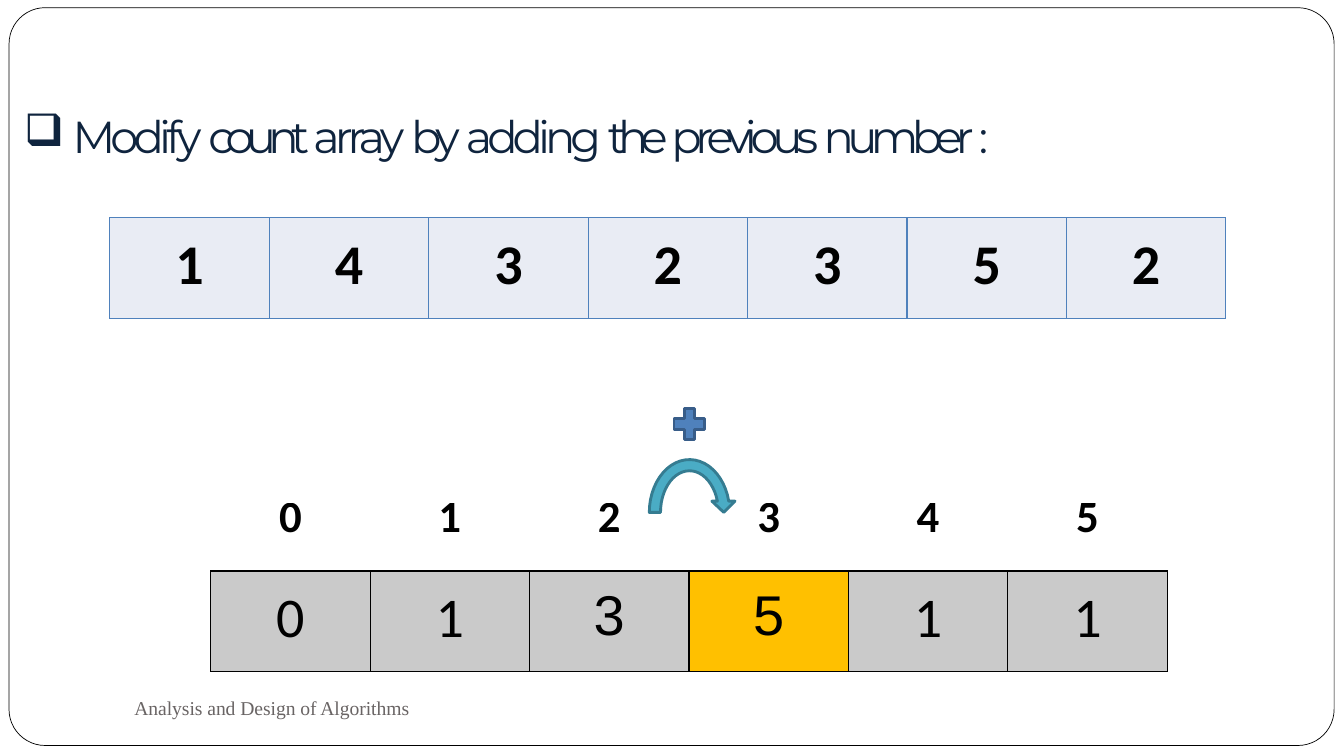
"""Builds the slide on modifying the count array in counting sort."""
import math

from lxml import etree
from pptx import Presentation
from pptx.dml.color import RGBColor
from pptx.enum import shapes, text
from pptx.oxml import ns
from pptx.util import Pt

COLORS = {
    "white": "FFFFFF", "black": "000000", "navy": "0F243E", "footer": "696464",
    "blue": "4F81BC", "blue_line": "385D89", "teal": "4AACC5", "teal_line": "357C91",
    "pale": "E9ECF4", "grey": "CACACA", "gold": "FFC000",
}
CELL_WIDTH = 113.88
TITLE = [("Modify ", -3.5), ("count ", -5.5), ("array ", -3.5), ("by ", -3.9),
         ("adding ", -3.6), ("the ", -5.7), ("previous ", -4.5), ("number ", -4.8)]
INPUT = "1432352"
INDEXES = "012345"
COUNTS = "013511"
CURRENT = 3


def rgb(name):
    return RGBColor.from_string(COLORS[name])


def add_text(p, words, size, font, color="black", bold=False, spacing=0):
    r = p.add_run()
    r.text = words
    r.font.size, r.font.name, r.font.bold = Pt(size), font, bold
    r.font.color.rgb = rgb(color)
    if spacing:
        r._r.get_or_add_rPr().set("spc", str(round(spacing * 100)))


def set_frame(tf, anchor, top=0):
    tf.word_wrap = True
    tf.auto_size = text.MSO_AUTO_SIZE.SHAPE_TO_FIT_TEXT
    tf.vertical_anchor = anchor
    tf.margin_left = tf.margin_right = tf.margin_bottom = 0
    tf.margin_top = Pt(top)


def style_shape(sp, fill, line, width):
    sp.shadow.inherit = False
    sp.fill.solid()
    sp.fill.fore_color.rgb = rgb(fill)
    sp.line.color.rgb = rgb(line)
    sp.line.width = Pt(width)


def add_preset(s, kind, box, adjust, fill, line, width):
    sp = s.shapes.add_shape(kind, *map(Pt, box))
    sp.adjustments[0] = adjust
    style_shape(sp, fill, line, width)
    return sp


def add_title(s):
    sp = s.shapes.title
    sp.left, sp.top, sp.width, sp.height = map(Pt, (16.5, 77, 744.5, 40.5))
    tf = sp.text_frame
    set_frame(tf, text.MSO_ANCHOR.TOP, 1)
    p = tf.paragraphs[0]
    p.alignment = text.PP_ALIGN.LEFT
    p.space_before = Pt(1.1)
    pPr = p._p.get_or_add_pPr()
    pPr.set("marL", str(Pt(35.3)))
    pPr.set("indent", str(-Pt(34.6)))
    etree.SubElement(pPr, ns.qn("a:buChar")).set("char", "❑")
    for words, spacing in TITLE:
        add_text(p, words, 32, "Montserrat", "navy", spacing=spacing)
    add_text(p, ":", 31, "Montserrat", "navy", spacing=-1.4)


def add_grid(s, left, top, heights, columns):
    width = CELL_WIDTH * columns
    frame = s.shapes.add_table(len(heights), columns, Pt(left), Pt(top),
                               Pt(width), Pt(sum(heights)))
    table = frame.table
    table.first_row = table.horz_banding = False
    for row, height in zip(table.rows, heights):
        row.height = Pt(height)
    for column in table.columns:
        column.width = Pt(CELL_WIDTH)
    return table


def set_borders(cell, color, sides):
    tcPr = cell._tc.get_or_add_tcPr()
    for side in sides:
        ln = etree.SubElement(tcPr, ns.qn(f"a:ln{side}"), w=str(Pt(1)))
        fill = etree.SubElement(ln, ns.qn("a:solidFill"))
        etree.SubElement(fill, ns.qn("a:srgbClr"), val=COLORS[color])


def fill_cell(cell, digit, size, fill=None, border="black", sides="LRTB",
              top=9.4, line_spacing=None, font="Calibri", bold=False):
    set_borders(cell, border, sides)
    if fill:
        cell.fill.solid()
        cell.fill.fore_color.rgb = rgb(fill)
    else:
        cell.fill.background()
    cell.margin_left = cell.margin_right = cell.margin_bottom = 0
    cell.margin_top = Pt(top)
    p = cell.text_frame.paragraphs[0]
    p.alignment = text.PP_ALIGN.CENTER
    p.space_before = Pt(top)
    if line_spacing:
        p.line_spacing = Pt(line_spacing)
    add_text(p, digit, size, font, bold=bold)


def add_input_array(s):
    table = add_grid(s, 78.5, 155.5, [72], len(INPUT))
    for i, digit in enumerate(INPUT):
        fill_cell(table.cell(0, i), digit, 40, "pale", "blue", bold=True)


def add_count_array(s):
    table = add_grid(s, 150.5, 358.9, [49, 72], len(COUNTS))
    for i, (index, count) in enumerate(zip(INDEXES, COUNTS)):
        fill_cell(table.cell(0, i), index, 32, sides="B", top=0,
                  line_spacing=30.4, bold=True)
        summed = i in (CURRENT - 1, CURRENT)
        fill_cell(table.cell(1, i), count, 40, "gold" if i == CURRENT else "grey",
                  top=9.9 if summed else 9.4, font="Arial" if summed else "Calibri")


def arc(rx, ry, end_y, steps=24):
    """Return points of an arch from its left foot over the top to end_y."""
    cx, cy = 492.5, 366
    sweep = math.pi - math.asin((cy - end_y) / ry)
    angles = [math.pi - sweep * i / steps for i in range(steps + 1)]
    return [(cx + rx * math.cos(a), cy - ry * math.sin(a)) for a in angles]


def add_curved_arrow(s):
    neck = 358
    outer, inner = arc(28.7, 37.7, neck), arc(20.7, 29.7, neck)
    head = [(525, neck), (517, 366), (508.5, neck)]
    points = [(Pt(x), Pt(y)) for x, y in outer + head + inner[::-1]]
    builder = s.shapes.build_freeform(*points[0])
    builder.add_line_segments(points[1:], close=True)
    style_shape(builder.convert_to_shape(), "teal", "teal_line", 2.04)


def add_footer(s):
    tf = s.shapes.add_textbox(*map(Pt, (96, 486, 416, 36))).text_frame
    set_frame(tf, text.MSO_ANCHOR.MIDDLE)
    p = tf.paragraphs[0]
    p.line_spacing = Pt(20.1)
    add_text(p, "Analysis and Design of Algorithms", 14, "Times New Roman",
             "footer", spacing=-0.06)


def main():
    prs = Presentation()
    prs.slide_width, prs.slide_height = Pt(960), Pt(540)
    s = prs.slides.add_slide(prs.slide_layouts[5])
    border = add_preset(s, shapes.MSO_SHAPE.ROUNDED_RECTANGLE, (6.5, 5.5, 946.5, 527),
                        0.049, "white", "black", 0.5)
    s.shapes._spTree.insert(2, border._element)
    add_title(s)
    add_input_array(s)
    add_count_array(s)
    add_curved_arrow(s)
    add_preset(s, shapes.MSO_SHAPE.CROSS, (481.5, 292, 22, 22), 0.33,
               "blue", "blue_line", 2.04)
    add_footer(s)
    prs.save("out.pptx")


if __name__ == "__main__":
    main()
